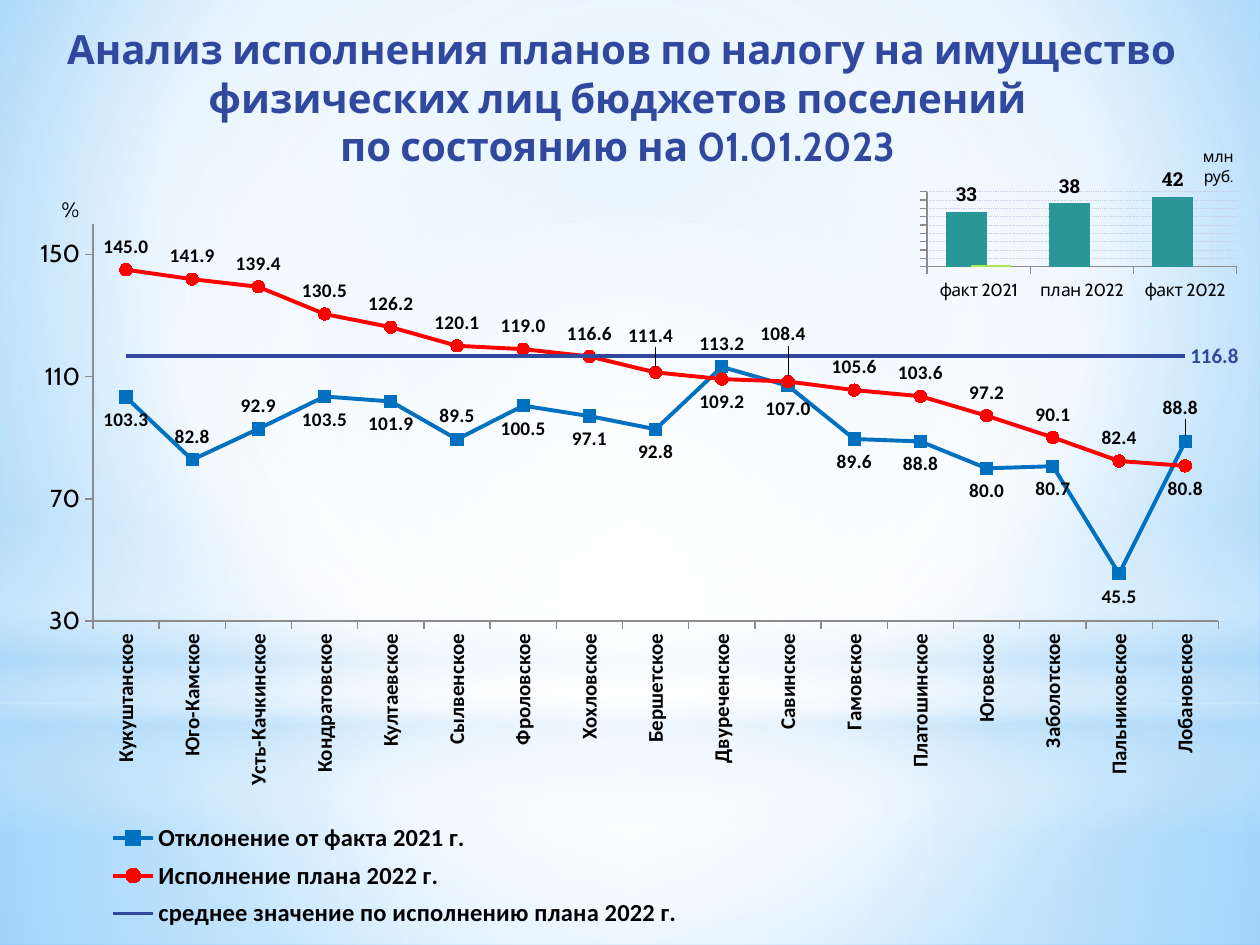
from lxml import etree
from pptx import Presentation
from pptx.chart.data import CategoryChartData
from pptx.dml.color import RGBColor
from pptx.enum.chart import (XL_CHART_TYPE, XL_LABEL_POSITION as POS, XL_LEGEND_POSITION,
                             XL_MARKER_STYLE, XL_TICK_LABEL_POSITION, XL_TICK_MARK)
from pptx.enum.dml import MSO_LINE
from pptx.enum.shapes import MSO_SHAPE
from pptx.enum.text import MSO_ANCHOR, PP_ALIGN
from pptx.oxml import parse_xml
from pptx.oxml.ns import nsdecls, qn
from pptx.util import Inches, Pt

NAVY, BLUE, RED, TEAL, LIME = "31489F", "0070C0", "FF0000", "299797", "A7EA52"
WHITE, SKY, BLACK, AXIS_GRAY, GRID = "FFFFFF", "B4DCFA", "000000", "8C8C8C", "C8CDE5"
CENTER = (50, 50, 50, 50)

SETTLEMENTS = [
    "Кукуштанское", "Юго-Камское", "Усть-Качкинское", "Кондратовское", "Култаевское",
    "Сылвенское", "Фроловское", "Хохловское", "Бершетское", "Двуреченское", "Савинское",
    "Гамовское", "Платошинское", "Юговское", "Заболотское", "Пальниковское", "Лобановское"]
FACT_CHANGE = [103.3, 82.8, 92.9, 103.5, 101.9, 89.5, 100.5, 97.1, 92.8, 113.2, 107, 89.6,
               88.8, 80, 80.7, 45.5, 88.8]
PLAN_DONE = [145, 141.9, 139.4, 130.5, 126.2, 120.1, 119, 116.6, 111.4, 109.2, 108.4, 105.6,
             103.6, 97.2, 90.1, 82.4, 80.8]
FACT_ABOVE = {1, 2, 5, 9, 16}
PLAN_ABOVE = set(range(17)) - {9, 16}


def rgb(color):
    return RGBColor.from_string(color)


def set_font(font, size, name, color=BLACK, bold=False):
    font.size, font.name, font.bold = Pt(size), name, bold
    font.color.rgb = rgb(color)


def set_gradient(fill, root, stops, to=None):
    """Stops are (position, colour, alpha); without `to` the gradient runs downwards."""
    fill.gradient()
    old = next(root.iter(qn("a:gradFill")))
    gs = "".join(
        f'<a:gs pos="{pos * 1000}"><a:srgbClr val="{color}">'
        f'<a:alpha val="{alpha * 1000}"/></a:srgbClr></a:gs>' for pos, color, alpha in stops)
    if to:
        sides = " ".join(f'{side}="{v * 1000}"' for side, v in zip("ltrb", to))
        shade = f'<a:path path="circle"><a:fillToRect {sides}/></a:path>'
    else:
        shade = '<a:lin ang="5400000" scaled="0"/>'
    old.getparent().replace(old, parse_xml(
        f'<a:gradFill {nsdecls("a")} rotWithShape="1"><a:gsLst>{gs}</a:gsLst>{shade}</a:gradFill>'))


def add_glow(slide, kind, top, height, stops, to=None):
    sp = slide.shapes.add_shape(kind, 0, Inches(top), Inches(10), Inches(height))
    sp.shadow.inherit = False
    sp.line.fill.background()
    set_gradient(sp.fill, sp._element, stops, to)


def add_backdrop(slide):
    set_gradient(slide.background.fill, slide._element,
                 [(0, "9ED5FF", 100), (60, WHITE, 100), (100, "5BB9FF", 100)], (20, 10, 20, 60))
    rect = MSO_SHAPE.RECTANGLE
    add_glow(slide, rect, 5.58, 1.92, [(0, WHITE, 91), (37, WHITE, 76), (100, SKY, 79)], CENTER)
    add_glow(slide, rect, 0, 5.58, [(0, WHITE, 89), (48, WHITE, 62), (100, SKY, 79)], CENTER)
    add_glow(slide, rect, 4.12, 2.5, [(0, WHITE, 0), (29, WHITE, 30), (45, SKY, 40),
                                      (55, WHITE, 26), (65, SKY, 60), (100, WHITE, 0)])
    add_glow(slide, MSO_SHAPE.OVAL, 1.75, 5.58, [(0, WHITE, 100), (56, WHITE, 0)], CENTER)


def add_title(slide):
    tf = slide.shapes.add_textbox(0, Inches(0.17), Inches(9.88), Inches(1.2)).text_frame
    tf.word_wrap = True
    tf.vertical_anchor = MSO_ANCHOR.MIDDLE
    p = tf.paragraphs[0]
    p.text = ("Анализ исполнения планов по налогу на имущество физических лиц "
              "бюджетов поселений \vпо состоянию на 01.01.2023 ")
    p.alignment = PP_ALIGN.CENTER
    for r in p.runs:
        set_font(r.font, 23, "Cabin", NAVY, True)


def set_layout(element, index, x, y, w=None, h=None, edge=True, inner=False):
    """Place a chart part by fractions of the chart; edge=False means an offset."""
    for old in element.findall(qn("c:layout")):
        element.remove(old)
    layout = etree.Element(qn("c:layout"))
    manual = etree.SubElement(layout, qn("c:manualLayout"))
    values = [("layoutTarget", "inner" if inner else None),
              ("xMode", "edge" if edge else None), ("yMode", "edge" if edge else None),
              ("x", x), ("y", y), ("w", w), ("h", h)]
    for tag, value in values:
        if value is not None:
            etree.SubElement(manual, qn(f"c:{tag}")).set("val", str(value))
    element.insert(index, layout)


def add_chart(slide, kind, box, cats, series, number_format, plot):
    data = CategoryChartData(number_format=number_format)
    data.categories = cats
    for name, values in series:
        data.add_series(name, values)
    chart = slide.shapes.add_chart(kind, *map(Inches, box), data).chart
    chart.has_title = chart.has_legend = False
    set_layout(chart._chartSpace.chart.plotArea, 0, *plot, inner=True)
    return chart


def style_axis(axis, size, font, bold=False):
    axis.major_tick_mark = XL_TICK_MARK.OUTSIDE
    axis.format.line.color.rgb = rgb(AXIS_GRAY)
    set_font(axis.tick_labels.font, size, font, bold=bold)


def style_value_axis(axis, low, high, step):
    axis.minimum_scale, axis.maximum_scale, axis.major_unit = low, high, step
    axis.tick_labels.number_format = "#,##0"
    axis.tick_labels.number_format_is_linked = False


def add_unit(axis, text, size, x, y):
    title = axis.axis_title
    tf = title.text_frame
    tf.text = text
    for r in tf.paragraphs[0].runs:
        set_font(r.font, size, "Cabin")
    body = next(title._element.iter(qn("a:bodyPr")))
    body.set("rot", "0")
    body.set("vert", "horz")
    set_layout(title._element, 1, x, y)


def style_line(s, color, marker=None):
    s.smooth = False
    s.format.line.color.rgb = rgb(color)
    s.format.line.width = Pt(2.25)
    s.marker.style = marker or XL_MARKER_STYLE.NONE
    if marker:
        s.marker.size = 7
        s.marker.format.fill.solid()
        s.marker.format.fill.fore_color.rgb = rgb(color)
        s.marker.format.line.color.rgb = rgb(color)


def label_point(s, index, position, color=BLACK, size=11, lift=0):
    label = s.points[index].data_label
    set_font(label.font, size, "Calibri", color, True)
    label.position = position
    if lift:
        set_layout(label._dLbl, 1, -0.004, -lift, edge=False)


def add_settlement_chart(slide):
    chart = add_chart(
        slide, XL_CHART_TYPE.LINE_MARKERS, (0, 0.63, 9.96, 6.87), SETTLEMENTS,
        [("Отклонение от факта 2021 г.", FACT_CHANGE), ("Исполнение плана 2022 г.", PLAN_DONE),
         ("среднее значение по исполнению плана 2022 г.", [116.8] * len(SETTLEMENTS))],
        "#,##0.0", (0.074, 0.167, 0.897, 0.459))
    style_axis(chart.category_axis, 12, "Calibri", True)
    next(chart.category_axis._element.iter(qn("a:bodyPr"))).set("rot", "-5400000")
    axis = chart.value_axis
    axis.has_major_gridlines = False
    style_axis(axis, 14, "Cabin")
    style_value_axis(axis, 30, 160, 40)
    add_unit(axis, "%", 12, 0.046, 0.13)

    fact, plan, mean = chart.plots[0].series
    style_line(fact, BLUE, XL_MARKER_STYLE.SQUARE)
    style_line(plan, RED, XL_MARKER_STYLE.CIRCLE)
    style_line(mean, NAVY)
    for s, above, lifts in ((fact, FACT_ABOVE, {16: 0.012}),
                            (plan, PLAN_ABOVE, {8: 0.016, 10: 0.028})):
        for i in range(len(SETTLEMENTS)):
            label_point(s, i, POS.ABOVE if i in above else POS.BELOW, lift=lifts.get(i, 0))
    label_point(mean, len(SETTLEMENTS) - 1, POS.RIGHT, NAVY, 12)

    chart.has_legend = True
    legend = chart.legend
    legend.position = XL_LEGEND_POSITION.BOTTOM
    legend.include_in_layout = False
    set_font(legend.font, 14, "Calibri", bold=True)
    set_layout(legend._element, 1, 0.08, 0.85, 0.47, 0.14)


def add_total_chart(slide):
    chart = add_chart(
        slide, XL_CHART_TYPE.COLUMN_CLUSTERED, (7.28, 1.07, 2.6, 1.5),
        ["факт 2021", "план 2022", "факт 2022"],
        [("Series 1", [33, 38, 42]), ("Series 2", [1, None, None])],
        "#,##0", (0.03, 0.301, 0.945, 0.397))
    style_axis(chart.category_axis, 10, "Cabin")
    axis = chart.value_axis
    style_axis(axis, 12, "Roboto Slab")
    style_value_axis(axis, 0, 45, 5)
    axis.tick_label_position = XL_TICK_LABEL_POSITION.NONE
    grid = axis.major_gridlines.format.line
    grid.color.rgb, grid.width, grid.dash_style = rgb(GRID), Pt(0.5), MSO_LINE.ROUND_DOT
    add_unit(axis, "млн\vруб.", 9, 0.86, 0.03)

    plot = chart.plots[0]
    plot.gap_width, plot.overlap, plot.vary_by_categories = 94, 40, False
    for s, color in zip(plot.series, (TEAL, LIME)):
        s.format.fill.solid()
        s.format.fill.fore_color.rgb = rgb(color)
    labels = plot.series[0].data_labels
    labels.show_value = True
    labels.position = POS.OUTSIDE_END
    set_font(labels.font, 11, "Roboto Slab", bold=True)


def main():
    prs = Presentation()
    prs.slide_width, prs.slide_height = Inches(10), Inches(7.5)
    slide = prs.slides.add_slide(prs.slide_layouts[6])
    add_backdrop(slide)
    add_title(slide)
    add_settlement_chart(slide)
    add_total_chart(slide)
    prs.save("out.pptx")


if __name__ == "__main__":
    main()
